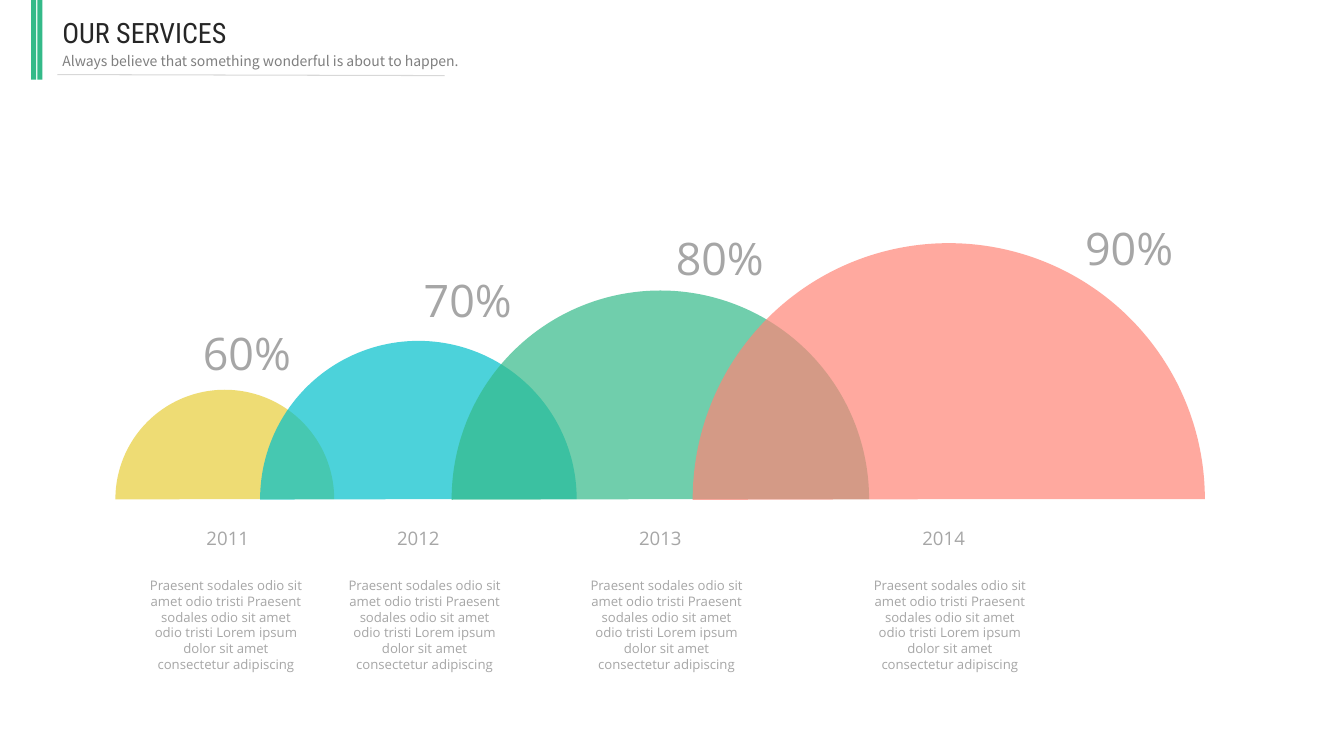
from lxml.etree import SubElement
from pptx import Presentation
from pptx.dml.color import RGBColor
from pptx.enum.shapes import MSO_CONNECTOR, MSO_SHAPE
from pptx.enum.text import PP_ALIGN
from pptx.oxml.ns import qn
from pptx.util import Inches, Pt

# The slide is a grid of square cells, 13.33 columns by 7.5 rows
COLS, ROWS = 13.33, 7.5
CELL = Inches(1)

COLORS = {
    "yellow": "E7CE39", "cyan": "00C0CB", "green": "34BA89", "coral": "FF8577",
    "title": "262626", "subtitle": "7F7F7F", "label": "A6A6A6", "rule": "D8D8D8",
}
BODY = ("Praesent sodales odio sit amet odio tristi Praesent sodales odio sit amet "
        "odio tristi Lorem ipsum dolor sit amet consectetur adipiscing")
# Year, share, colour, dome centre and diameter, year centre, body centre,
# share centre and share top; columns and rows within the chart region
SERVICES = [
    ("2011", "60%", "yellow", 1.08, 2.17, 1.11, 1.09, 1.30, 1.04),
    ("2012", "70%", "cyan", 3.00, 3.14, 3.00, 3.06, 3.49, 0.52),
    ("2013", "80%", "green", 5.40, 4.14, 5.40, 5.46, 5.99, 0.10),
    ("2014", "90%", "coral", 8.26, 5.08, 8.21, 8.27, 10.05, 0.00),
]


def cells(*lengths):
    return [round(length * CELL) for length in lengths]


def color(name):
    return RGBColor.from_string(COLORS[name])


def add_text(slide, text, box, *, size, ink, font="Open Sans",
             align=PP_ALIGN.CENTER, inset=(0.1, 0.05), wrap=True):
    tf = slide.shapes.add_textbox(*cells(*box)).text_frame
    tf.word_wrap = wrap
    tf.margin_left = tf.margin_right = Inches(inset[0])
    tf.margin_top = tf.margin_bottom = Inches(inset[1])
    p = tf.paragraphs[0]
    p.alignment = align
    r = p.add_run()
    r.text = text
    r.font.size, r.font.name = Pt(size), font
    r.font.color.rgb = color(ink)


def add_filled(slide, kind, box, fill, opacity=None):
    sp = slide.shapes.add_shape(kind, *cells(*box))
    sp.shadow.inherit = False
    sp.line.fill.background()
    sp.fill.solid()
    sp.fill.fore_color.rgb = color(fill)
    if opacity is not None:
        clr = sp._element.spPr.find(qn("a:solidFill"))[0]
        SubElement(clr, qn("a:alpha"), val=str(opacity * 1000))
    return sp


def add_header(slide, box):
    left, top, width, height = box
    # Twin accent bars
    for i in range(2):
        add_filled(slide, MSO_SHAPE.RECTANGLE,
                   (left + i * 0.06, top, 0.05, height), "green")
    # Title and subtitle
    text_left, text_width = left + 0.21, width - 0.21
    add_text(slide, "OUR SERVICES", (text_left, top + 0.1, text_width, 0.44),
             size=20, ink="title", font="Roboto Condensed", align=PP_ALIGN.LEFT)
    add_text(slide, "Always believe that something wonderful is about to happen.",
             (text_left, top + 0.47, text_width, 0.27), size=10, ink="subtitle",
             font="Noto Sans CJK SC", align=PP_ALIGN.LEFT)
    # Underline
    rule = slide.shapes.add_connector(
        MSO_CONNECTOR.STRAIGHT,
        *cells(left + 0.26, top + 0.74, left + 4.1, top + 0.75))
    rule.line.color.rgb = color("rule")
    rule.line.width = Pt(0.75)
    SubElement(rule._element.spPr, qn("a:effectLst"))


def add_service(slide, box, service):
    left, top, _, height = box
    year, share, fill, dome_x, size, year_x, body_x, share_x, share_y = service
    base = top + height * 0.61
    # Half-circle dome standing on the shared baseline
    dome = add_filled(slide, MSO_SHAPE.ARC,
                      (left + dome_x - size / 2, base - size / 2, size, size),
                      fill, opacity=70)
    dome.adjustments[0], dome.adjustments[1] = 107.9, 0
    # Year, description and share
    add_text(slide, year, (left + year_x - 0.5, base + 0.21, 1, 0.36),
             size=13.3, ink="label", inset=(0.13, 0.07))
    add_text(slide, BODY, (left + body_x - 0.885, base + 0.73, 1.77, 1.04),
             size=9.35, ink="label")
    add_text(slide, share, (left + share_x - 0.55, top + share_y, 1.1, 0.64),
             size=32, ink="label", wrap=False)


def main():
    prs = Presentation()
    prs.slide_width, prs.slide_height = cells(COLS, ROWS)
    slide = prs.slides.add_slide(prs.slide_layouts[6])
    for service in SERVICES:
        add_service(slide, (1.15, 2.14, 10.81, 4.61), service)
    add_header(slide, (0.31, 0, 4.44, 0.79))
    prs.save("out.pptx")


if __name__ == "__main__":
    main()
